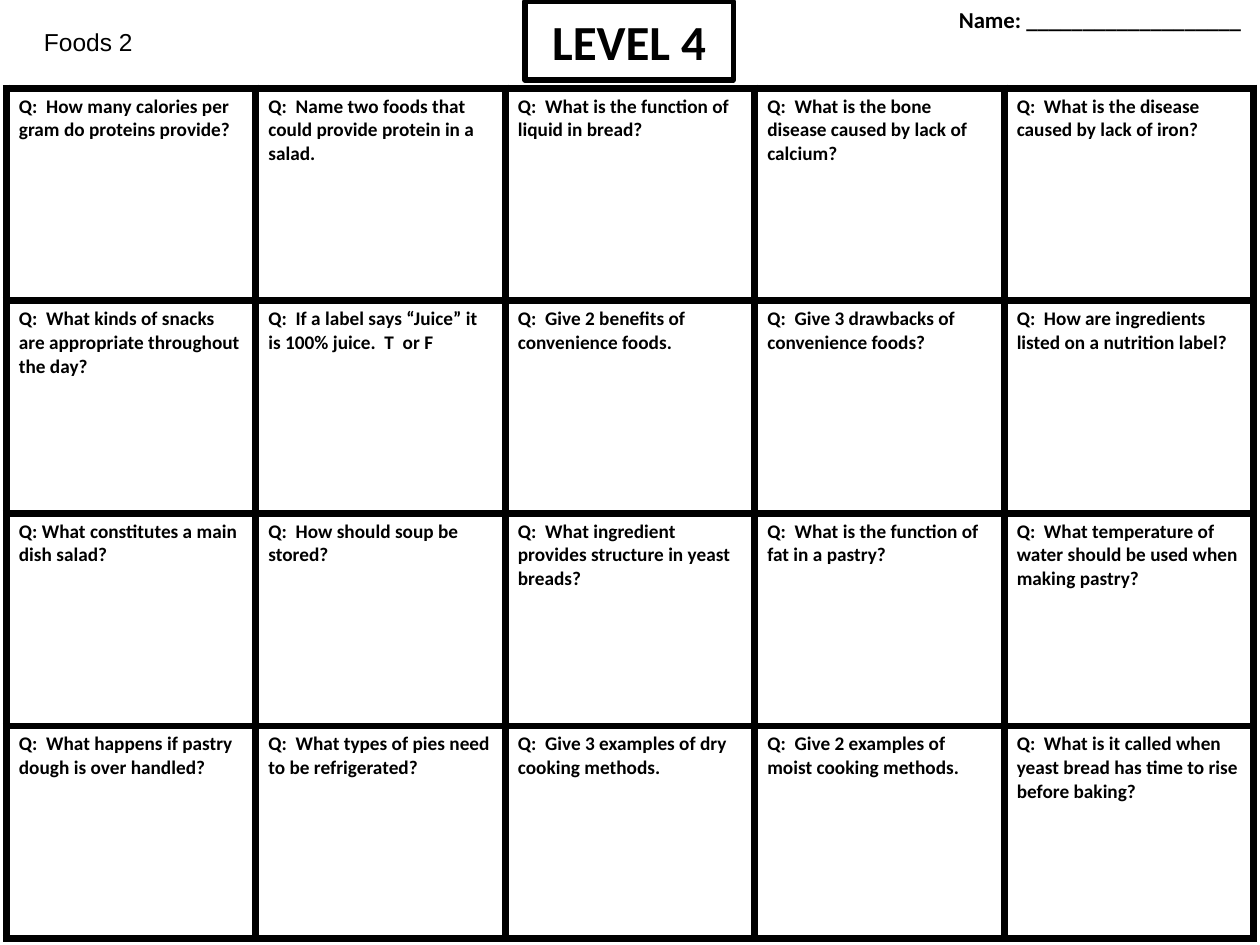
import pptx
import pptx.util
import pptx.dml.color
import pptx.enum.shapes
import pptx.enum.text
import pptx.oxml
import pptx.oxml.ns

Pt = pptx.util.Pt
BLACK = pptx.dml.color.RGBColor(0, 0, 0)
WHITE = pptx.dml.color.RGBColor(255, 255, 255)
LEFT = pptx.enum.text.PP_ALIGN.LEFT
CENTER = pptx.enum.text.PP_ALIGN.CENTER
TOP = pptx.enum.text.MSO_ANCHOR.TOP
MIDDLE = pptx.enum.text.MSO_ANCHOR.MIDDLE

ROWS = [
    ["Q:  How many calories per gram do proteins provide?",
     "Q:  Name two foods that could provide protein in a salad.",
     "Q:  What is the function of liquid in bread?",
     "Q:  What is the bone disease caused by lack of calcium?",
     "Q:  What is the disease caused by lack of iron?"],
    ["Q:  What kinds of snacks are appropriate throughout the day?",
     "Q:  If a label says “Juice” it is 100% juice.  T  or F",
     "Q:  Give 2 benefits of convenience foods.",
     "Q:  Give 3 drawbacks of convenience foods?",
     "Q:  How are ingredients listed on a nutrition label?"],
    ["Q: What constitutes a main dish salad?",
     "Q:  How should soup be stored?",
     "Q:  What ingredient provides structure in yeast breads?",
     "Q:  What is the function of fat in a pastry?",
     "Q:  What temperature of water should be used when making pastry?"],
    ["Q:  What happens if pastry dough is over handled?",
     "Q:  What types of pies need to be refrigerated?",
     "Q:  Give 3 examples of dry cooking methods.",
     "Q:  Give 2 examples of moist cooking methods.",
     "Q:  What is it called when yeast bread has time to rise before baking?"],
]


class Sheet:
    """Style and current slide of the worksheet."""
    font = "Calibri"
    ink = BLACK

    def __init__(self, slide):
        self.slide = slide

    def words(self, frame, text, size, bold=True, font=None, align=LEFT):
        frame.word_wrap = True
        para = frame.paragraphs[0]
        para.alignment = align
        run = para.add_run()
        run.text = text
        run.font.name = font or self.font
        run.font.size = Pt(size)
        run.font.bold = bold
        run.font.color.rgb = self.ink
        return para

    def label(self, box, text, size, **look):
        shape = self.slide.shapes.add_textbox(*map(Pt, box))
        shape.text_frame.vertical_anchor = TOP
        return self.words(shape.text_frame, text, size, **look)

    def frame(self, box, text, size, width):
        kind = pptx.enum.shapes.MSO_SHAPE.RECTANGLE
        shape = self.slide.shapes.add_shape(kind, *map(Pt, box))
        shape.shadow.inherit = False
        shape.fill.background()
        shape.line.color.rgb = self.ink
        shape.line.width = Pt(width)
        shape.text_frame.vertical_anchor = MIDDLE
        self.words(shape.text_frame, text, size, align=CENTER)

    def border(self, cell, width):
        props = cell._tc.get_or_add_tcPr()
        for side in ("lnL", "lnR", "lnT", "lnB"):
            props.append(pptx.oxml.parse_xml(
                f'<a:{side} {pptx.oxml.ns.nsdecls("a")} w="{Pt(width)}">'
                f'<a:solidFill><a:srgbClr val="{self.ink}"/></a:solidFill>'
                f'</a:{side}>'))

    def grid(self, box, rows, size, width):
        table = self.slide.shapes.add_table(
            len(rows), len(rows[0]), *map(Pt, box)).table
        table.first_row = table.horz_banding = False
        for col in table.columns:
            col.width = Pt(box[2] / len(rows[0]))
        for line, texts in zip(table.rows, rows):
            line.height = Pt(box[3] / len(rows))
            for cell, text in zip(line.cells, texts):
                self.border(cell, width)
                cell.fill.solid()
                cell.fill.fore_color.rgb = WHITE
                self.words(cell.text_frame, text, size)


def main():
    deck = pptx.Presentation()
    deck.slide_width, deck.slide_height = Pt(720), Pt(540)
    sheet = Sheet(deck.slides.add_slide(deck.slide_layouts[6]))

    # Header: course, level and name line
    sheet.label((18, 12, 120, 24.5), "Foods 2", 14, bold=False, font="Arial")
    sheet.frame((300, 0.75, 119, 45), "LEVEL 4", 28, 3)
    name = sheet.label((537, 0, 183, 26), "Name: ___________________", 13,
                       align=CENTER)
    name.space_before = Pt(2.6)

    # Question grid
    sheet.grid((3.6, 50.4, 712.8, 486), ROWS, 11, 4.5)

    deck.save("out.pptx")


if __name__ == "__main__":
    main()
